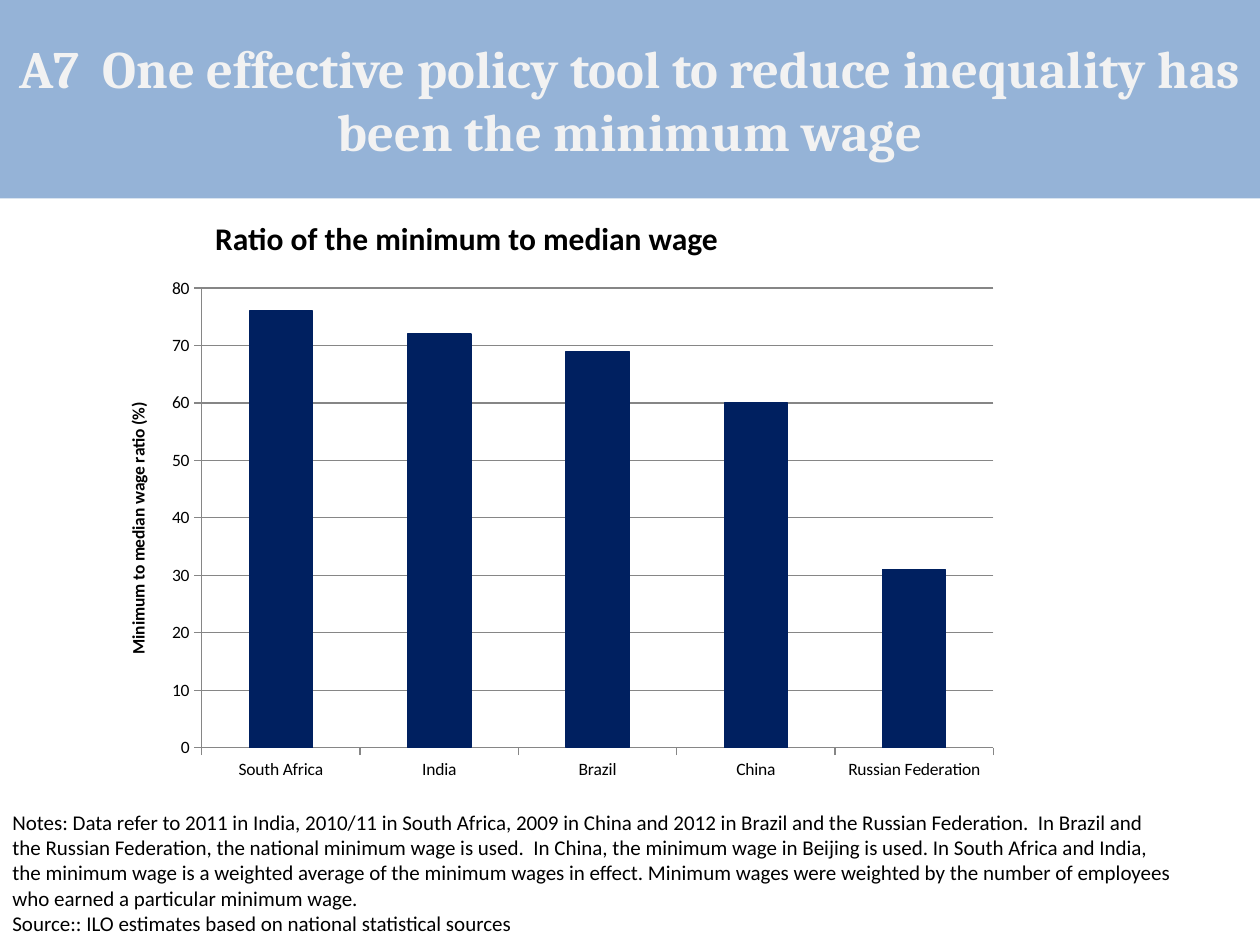
from lxml import etree
from pptx import Presentation
from pptx import util as u
from pptx.chart.data import CategoryChartData
from pptx.dml.color import RGBColor
from pptx.enum import chart as charts, shapes, text
from pptx.oxml import parse_xml
from pptx.oxml.ns import nsdecls

BLUE = RGBColor(0x95, 0xB3, 0xD7)
NAVY = RGBColor(0x00, 0x20, 0x60)
PALE = RGBColor(0xF2, 0xF2, 0xF2)
GREY = RGBColor(0x86, 0x86, 0x86)
BLACK = RGBColor(0, 0, 0)
HEADING_FONT, BODY_FONT = "Cambria", "Calibri"

WAGE_RATIOS = {"South Africa": 76, "India": 72, "Brazil": 69, "China": 60,
               "Russian Federation": 31}
NOTES = (
    "Notes: Data refer to 2011 in India, 2010/11 in South Africa, 2009 in China "
    "and 2012 in Brazil and the Russian Federation.  In Brazil and the Russian "
    "Federation, the national minimum wage is used.  In China, the minimum wage "
    "in Beijing is used. In South Africa and India, the minimum wage is a weighted "
    "average of the minimum wages in effect. Minimum wages were weighted by the "
    "number of employees who earned a particular minimum wage.\v"
    "Source:: ILO estimates based on national statistical sources"
)


def set_font(font, size, color=BLACK, bold=False, name=BODY_FONT):
    font.size, font.bold, font.name = u.Pt(size), bold, name
    font.color.rgb = color


def set_inner_plot(chart, x, y, width, height):
    """Fix the plot area, without its labels, as shares of the chart."""
    plot_area = chart.plots[0]._element.getparent()
    for layout in plot_area.findall("{*}layout"):
        plot_area.remove(layout)
    layout = parse_xml(f'<c:layout {nsdecls("c")}><c:manualLayout/></c:layout>')
    settings = {"layoutTarget": "inner", "xMode": "edge", "yMode": "edge",
                "x": x, "y": y, "w": width, "h": height}
    for tag, value in settings.items():
        child = etree.SubElement(layout[0], f"{{{layout.nsmap['c']}}}{tag}")
        child.set("val", str(value))
    plot_area.insert(0, layout)


class WageSlide:
    """Places elements in shares of the slide's width and height."""

    def __init__(self, presentation):
        self.width = presentation.slide_width
        self.height = presentation.slide_height
        self.slide = presentation.slides.add_slide(presentation.slide_layouts[5])

    def box(self, left, top, width, height):
        return (int(left * self.width), int(top * self.height),
                int(width * self.width), int(height * self.height))

    def title(self, words, band_height, *area):
        title = self.slide.shapes.title
        title.left, title.top, title.width, title.height = self.box(*area)
        frame = title.text_frame
        frame.text = words
        frame.word_wrap = True
        frame.auto_size = text.MSO_AUTO_SIZE.NONE
        frame.vertical_anchor = text.MSO_ANCHOR.MIDDLE
        frame.paragraphs[0].alignment = text.PP_ALIGN.CENTER
        set_font(frame.paragraphs[0].runs[0].font, 30, PALE, True, HEADING_FONT)

        band = self.slide.shapes.add_shape(
            shapes.MSO_SHAPE.RECTANGLE, *self.box(0, 0, 1, band_height))
        band.shadow.inherit = False
        band.fill.solid()
        band.fill.fore_color.rgb = BLUE
        band.line.fill.background()
        title.element.addprevious(band.element)

    def text(self, words, size, bold, *area):
        frame = self.slide.shapes.add_textbox(*self.box(*area)).text_frame
        frame.word_wrap = True
        frame.text = words
        for run in frame.paragraphs[0].runs:
            set_font(run.font, size, bold=bold)

    def column_chart(self, values, axis_title, *area):
        data = CategoryChartData(number_format="0")
        data.categories = list(values)
        data.add_series("Series 1", list(values.values()))
        chart = self.slide.shapes.add_chart(
            charts.XL_CHART_TYPE.COLUMN_CLUSTERED, *self.box(*area), data).chart
        chart.has_title = chart.has_legend = False
        set_font(chart.font, 10)
        set_inner_plot(chart, 0.084, 0.046, 0.849, 0.897)

        plot = chart.plots[0]
        plot.gap_width = 150
        plot.vary_by_categories = False
        series = plot.series[0]
        series.format.fill.solid()
        series.format.fill.fore_color.rgb = NAVY
        series.format.line.color.rgb = NAVY
        series.format.line.width = u.Pt(0.75)

        value_axis = chart.value_axis
        value_axis.minimum_scale, value_axis.maximum_scale = 0, 80
        value_axis.major_unit = 10
        value_axis.has_major_gridlines = True
        value_axis.tick_labels.number_format = "0"
        value_axis.tick_labels.number_format_is_linked = False
        title_frame = value_axis.axis_title.text_frame
        title_frame.text = axis_title
        set_font(title_frame.paragraphs[0].runs[0].font, 10, bold=True)
        for axis in (chart.category_axis, value_axis):
            axis.major_tick_mark = charts.XL_TICK_MARK.OUTSIDE
        for part in (chart.category_axis, value_axis, value_axis.major_gridlines):
            part.format.line.color.rgb = GREY
            part.format.line.width = u.Pt(0.75)


def main():
    presentation = Presentation()
    presentation.slide_width, presentation.slide_height = u.Inches(10), u.Inches(7.5)
    slide = WageSlide(presentation)
    slide.title("A7  One effective policy tool to reduce inequality has been "
                "the minimum wage", 0.21, 0, 0.03, 1, 0.15)
    slide.column_chart(WAGE_RATIOS, "Minimum to median wage ratio (%)",
                       0.098, 0.28, 0.74, 0.545)
    slide.text(NOTES, 12, False, 0, 0.85, 0.94, 0.15)
    slide.text("Ratio of the minimum to median wage", 18, True,
               0.161, 0.225, 0.606, 0.054)
    presentation.save("out.pptx")


if __name__ == "__main__":
    main()
